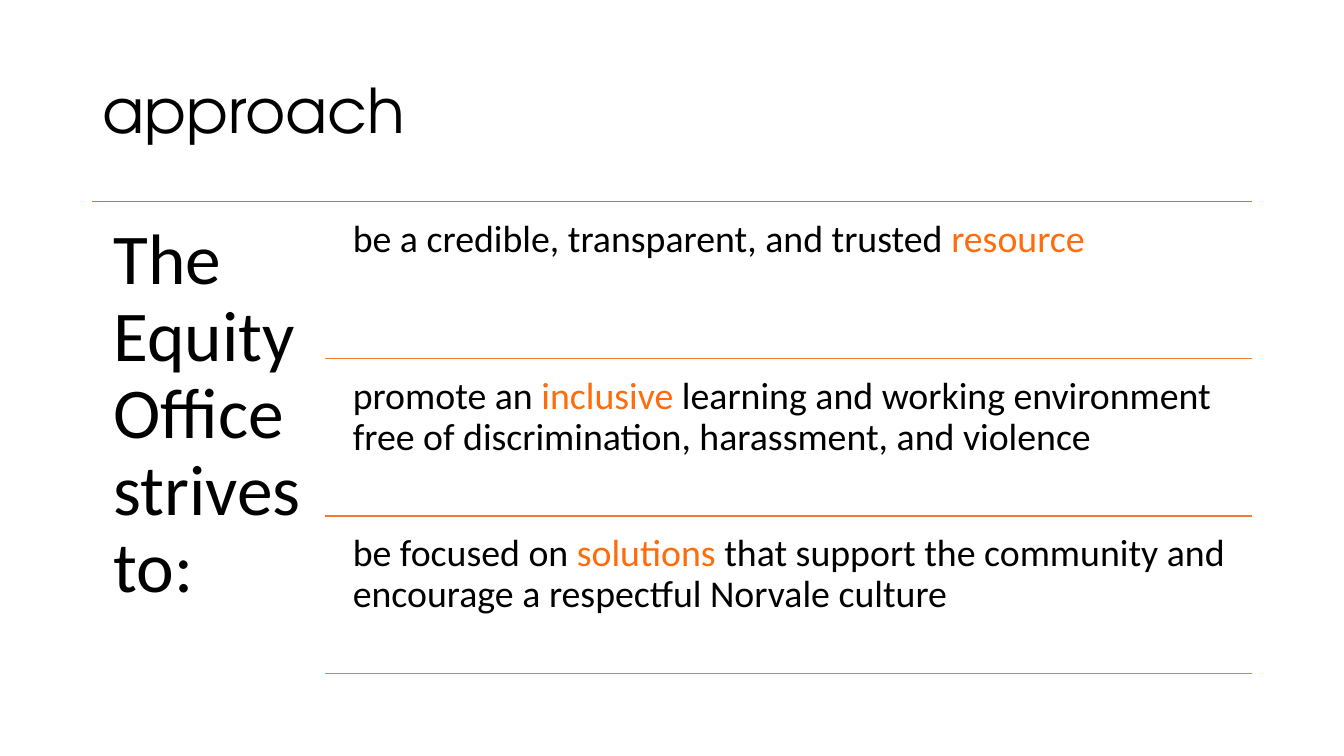
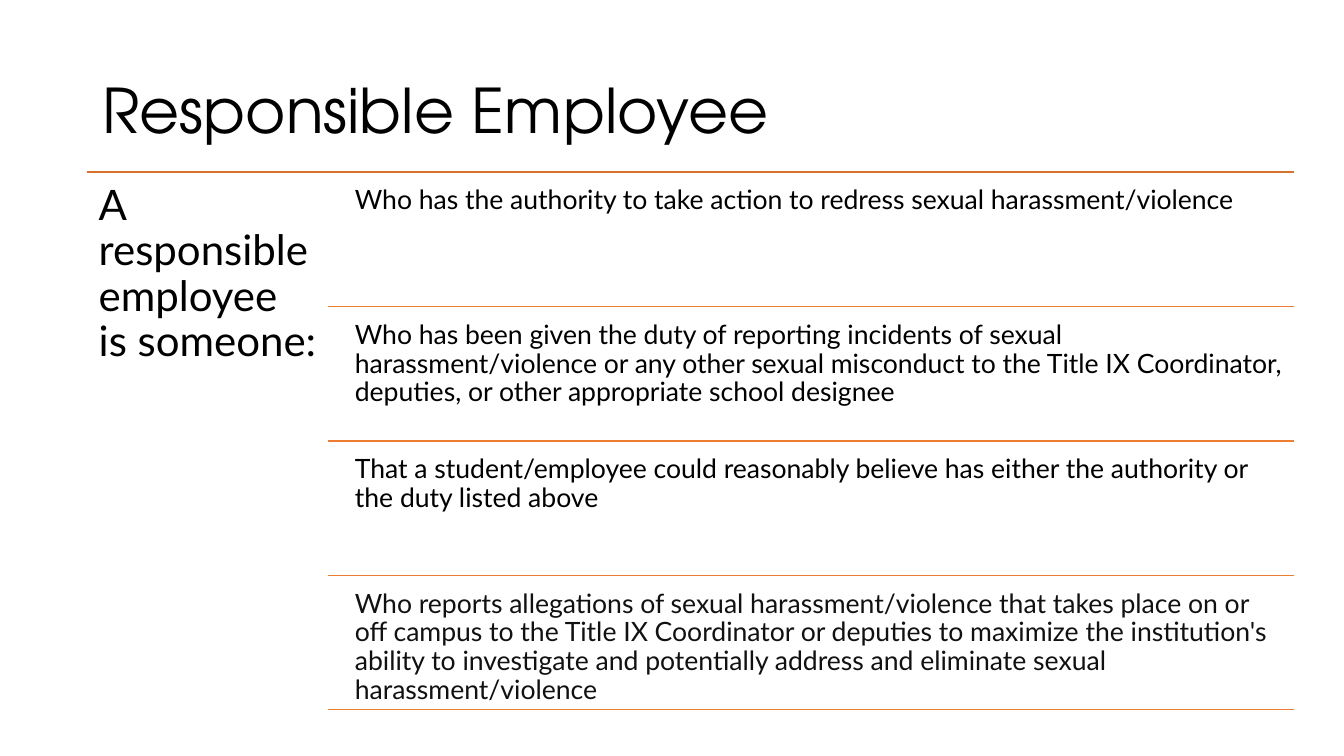
from dataclasses import dataclass

from pptx import Presentation
from pptx.dml.color import RGBColor as RGB
from pptx.enum.shapes import MSO_CONNECTOR as Link
from pptx.enum.text import MSO_ANCHOR as Anchor, MSO_AUTO_SIZE as Fit, PP_ALIGN as Align
from pptx.oxml.ns import qn
from pptx.util import Pt


@dataclass(frozen=True)
class Theme:
    ink: str = "000000"
    soft: str = "111111"
    accent: str = "FF6C0C"
    top: str = "D7712C"
    rule: str = "ED7D31"
    font: str = "TeX Gyre Adventor"
    title: float = 44
    line: float = 1
    lead: float = 0.9


theme = Theme()

# Content: each row is a list of (text, colour) runs
INK, SOFT, HOT = theme.ink, theme.soft, theme.accent
SLIDES = [
    {
        "title": "approach",
        "label": "The Equity Office strives to:",
        "rows": [
            [("be a credible, transparent, and trusted ", INK), ("resource", HOT)],
            [("promote an ", INK), ("inclusive", HOT),
             (" learning and working environment free of discrimination, "
              "harassment, and violence", INK)],
            [("be focused on ", INK), ("solutions", HOT),
             (" that support the community and encourage a respectful "
              "Norvale culture", INK)],
        ],
        "font": "Calibri", "big": 51, "small": 27,
        "left": 66, "right": 894, "top": 144, "pitch": 112.3,
        "side": 166, "gap": 12, "drop": 5, "pads": (15, 8),
    },
    {
        "title": "Responsible Employee",
        "label": "A responsible employee is someone:",
        "rows": [
            [("Who has the authority to take action to redress sexual "
              "harassment/violence", INK)],
            [("Who has been given the duty of reporting incidents of sexual "
              "harassment/violence or any other sexual misconduct to the Title IX "
              "Coordinator, deputies, or other appropriate school designee", INK)],
            [("That a student/employee could reasonably believe has either the "
              "authority or the duty listed above", INK)],
            [("Who reports allegations of sexual harassment/violence that takes "
              "place on or off campus to the Title IX Coordinator or deputies to "
              "maximize the institution's ability to investigate and potentially "
              "address and eliminate sexual harassment/violence", SOFT)],
        ],
        "font": "Lato", "big": 30, "small": 19,
        "left": 62, "right": 924.5, "top": 123, "pitch": 96,
        "side": 172.5, "gap": 13, "drop": 4.6, "pads": (8.5, 6),
    },
]


def place(shape, x, y, w, h):
    box = {"left": x, "top": y, "width": w, "height": h}
    for name, val in box.items():
        setattr(shape, name, Pt(val))


def write(shape, runs, font, size, pad=None, anchor=Anchor.TOP):
    frame = shape.text_frame
    style = {"word_wrap": True, "auto_size": Fit.NONE, "vertical_anchor": anchor}
    if pad is not None:
        for side in ("left", "top", "right", "bottom"):
            style["margin_" + side] = Pt(pad)
    for name, val in style.items():
        setattr(frame, name, val)
    para = frame.paragraphs[0]
    para.alignment, para.line_spacing = Align.LEFT, theme.lead
    for text, color in runs:
        run = para.add_run()
        run.text = text
        for name, val in {"name": font, "size": Pt(size)}.items():
            setattr(run.font, name, val)
        run.font.color.rgb = RGB.from_string(color)


def block(slide, box, *args):
    write(slide.shapes.add_textbox(*map(Pt, box)), *args)


def rule(slide, x, end, y, color):
    line = slide.shapes.add_connector(Link.STRAIGHT, Pt(x), Pt(y), Pt(end), Pt(y))
    line.line.color.rgb = RGB.from_string(color)
    line.line.width = Pt(theme.line)
    props = line.element.spPr
    props.append(props.makeelement(qn("a:effectLst"), {}))


def build(deck, data):
    slide = deck.slides.add_slide(deck.slide_layouts[5])
    left, right, top = data["left"], data["right"], data["top"]
    pitch, drop, rows = data["pitch"], data["drop"], data["rows"]
    font, (wide, slim) = data["font"], data["pads"]

    # Title
    head = slide.shapes.title
    place(head, 66, 28.8, 828, 104.4)
    write(head, [(data["title"], INK)], theme.font, theme.title, anchor=Anchor.MIDDLE)

    # Side label under the top rule
    rule(slide, left, right, top, theme.top)
    tall = pitch * len(rows) + drop
    block(slide, (left, top, data["side"], tall),
          [(data["label"], INK)], font, data["big"], wide)

    # Rows, each closed by a rule
    start = left + data["side"]
    x = start + data["gap"]
    for i, runs in enumerate(rows):
        y = top + i * pitch + drop
        block(slide, (x, y, right - x, pitch - drop), runs, font, data["small"], slim)
        rule(slide, start, right, top + (i + 1) * pitch, theme.rule)


def main():
    deck = Presentation()
    deck.slide_width, deck.slide_height = Pt(960), Pt(540)
    for data in SLIDES:
        build(deck, data)
    deck.save("out.pptx")


if __name__ == "__main__":
    main()
